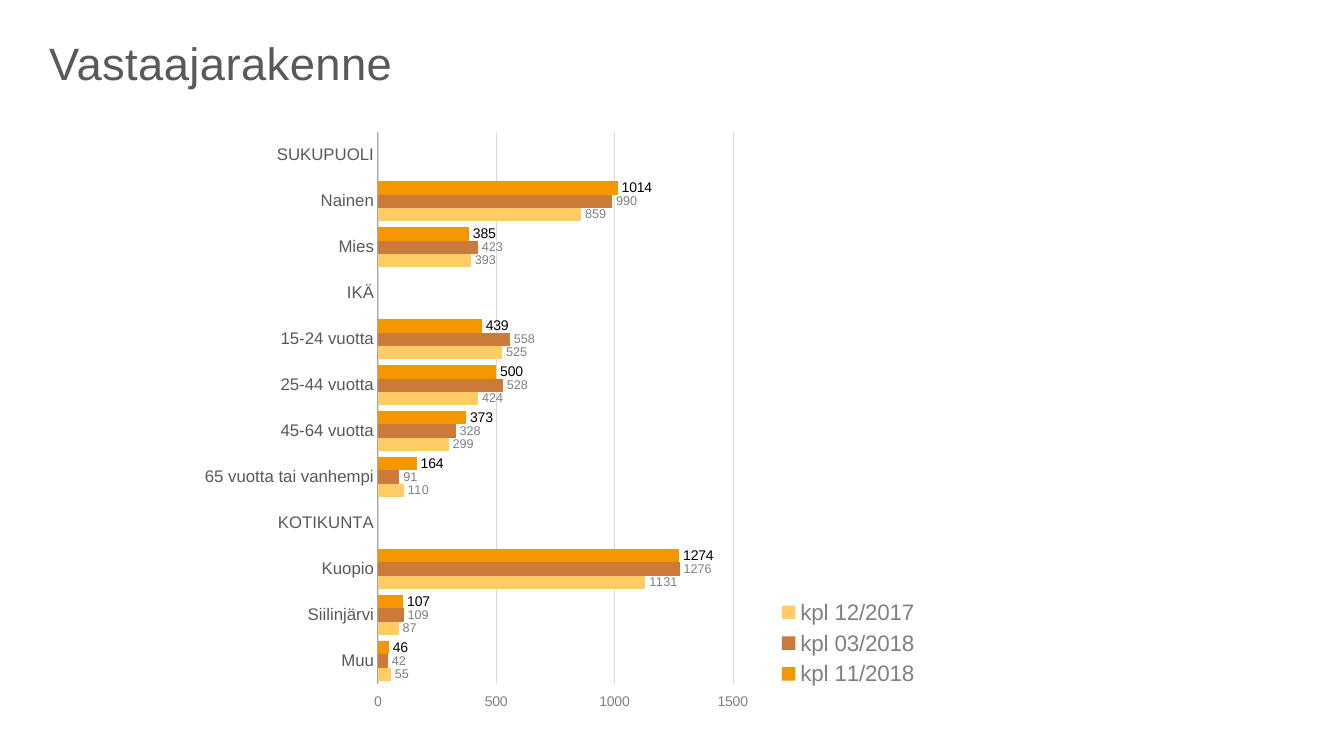
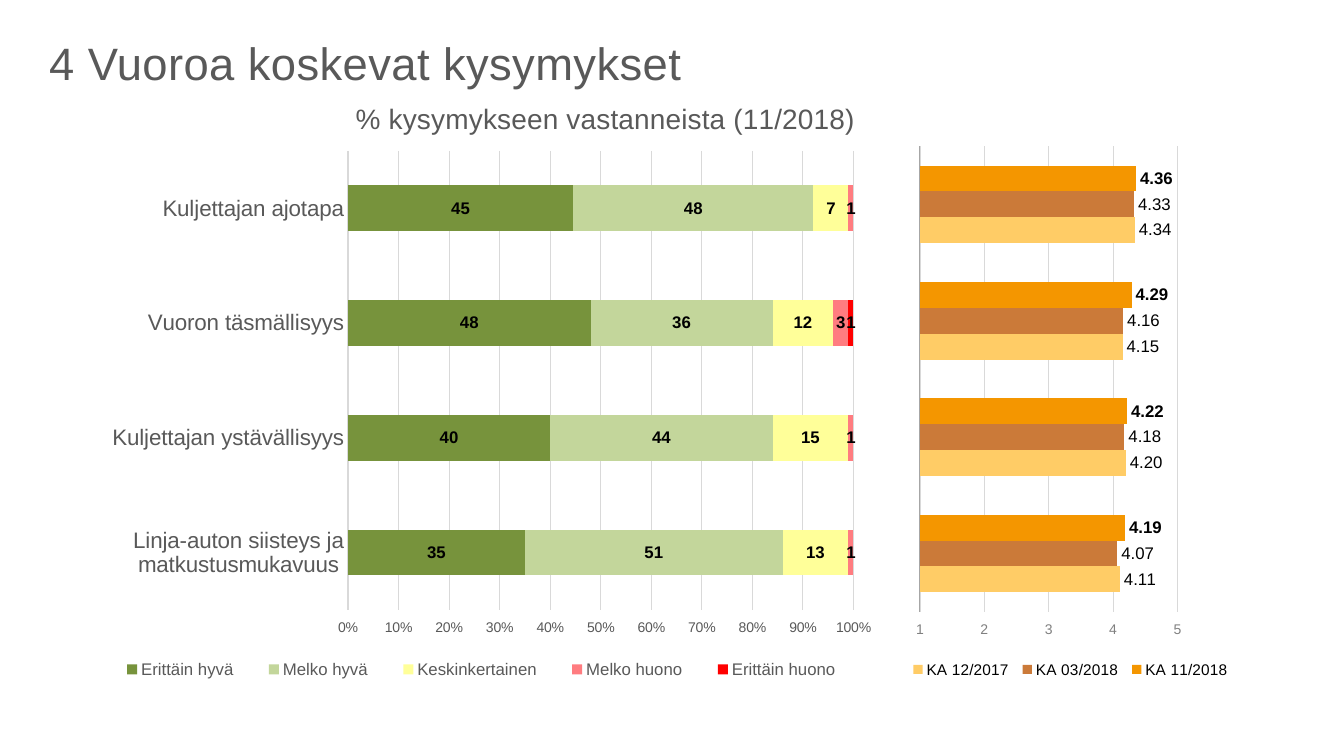
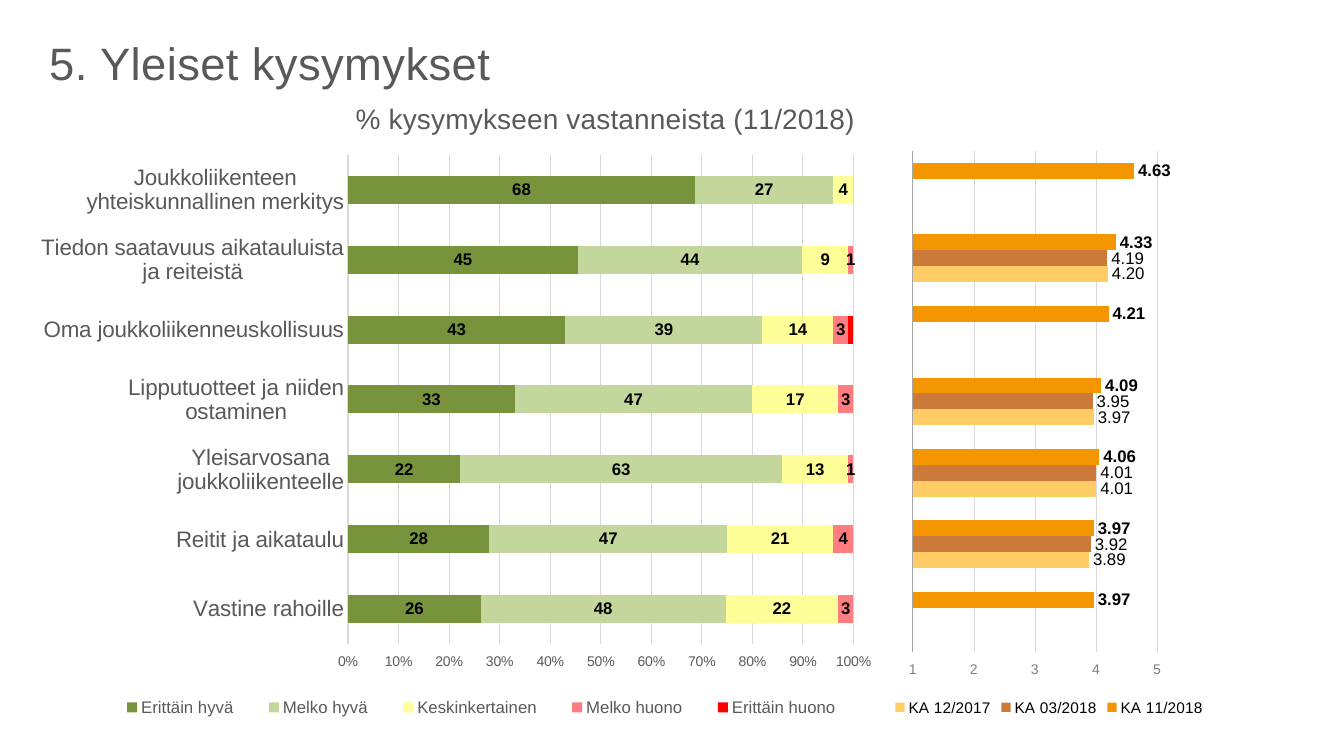
from lxml.etree import Element, SubElement
from pptx import Presentation
from pptx.chart.data import CategoryChartData
from pptx.dml.color import RGBColor
from pptx.enum.chart import XL_CHART_TYPE as ChartType
from pptx.enum.chart import XL_LABEL_POSITION as LabelPosition
from pptx.enum.chart import XL_LEGEND_POSITION as LegendPosition
from pptx.enum.chart import XL_TICK_LABEL_POSITION as TickLabels
from pptx.enum.chart import XL_TICK_MARK as TickMark
from pptx.enum.text import MSO_ANCHOR
from pptx.oxml.ns import qn
from pptx.util import Inches, Pt

FONT = "Arial"
COLORS = {
    "black": "000000", "dark": "595959", "gray": "808080",
    "axis": "A6A6A6", "grid": "D9D9D9",
    "11/2018": "F49600", "03/2018": "CB7A39", "12/2017": "FFCC66",
    "Erittäin hyvä": "77933C", "Melko hyvä": "C3D69B",
    "Keskinkertainen": "FFFF99", "Melko huono": "FF7C80",
    "Erittäin huono": "FF0000",
}
ROUNDS = ["11/2018", "03/2018", "12/2017"]
GRADES = ["Erittäin hyvä", "Melko hyvä", "Keskinkertainen",
          "Melko huono", "Erittäin huono"]

RESPONDENTS = [
    ("SUKUPUOLI", None, None, None),
    ("Nainen", 1014, 990, 859),
    ("Mies", 385, 423, 393),
    ("IKÄ", None, None, None),
    ("15-24 vuotta", 439, 558, 525),
    ("25-44 vuotta", 500, 528, 424),
    ("45-64 vuotta", 373, 328, 299),
    ("65 vuotta tai vanhempi", 164, 91, 110),
    ("KOTIKUNTA", None, None, None),
    ("Kuopio", 1274, 1276, 1131),
    ("Siilinjärvi", 107, 109, 87),
    ("Muu", 46, 42, 55),
]

QUESTION_SLIDES = [
    {
        "title": "4 Vuoroa koskevat kysymykset",
        "height": 5.96, "mean_width": 3.54, "labelled": GRADES,
        "mean_plot": (0.103, 0.094, 0.721, 0.775),
        "mean_legend": (0.06, 0.94, 0.93, 0.05),
        "shares": [
            ("Kuljettajan ajotapa", 45, 48, 7, 1, 0),
            ("Vuoron täsmällisyys", 48, 36, 12, 3, 1),
            ("Kuljettajan ystävällisyys", 40, 44, 15, 1, 0),
            ("Linja-auton siisteys ja matkustusmukavuus", 35, 51, 13, 1, 0),
        ],
        "means": [
            ("1", 4.36, 4.33, 4.34),
            ("2", 4.29, 4.16, 4.15),
            ("3", 4.22, 4.18, 4.2),
            ("4", 4.19, 4.07, 4.11),
        ],
    },
    {
        "title": "5. Yleiset kysymykset",
        "height": 6.35, "mean_width": 3.36, "labelled": GRADES[:4],
        "mean_plot": (0.087, 0.096, 0.721, 0.782),
        "mean_legend": (0.02, 0.94, 0.94, 0.05),
        "shares": [
            ("Joukkoliikenteen yhteiskunnallinen merkitys", 68, 27, 4, 0, 0),
            ("Tiedon saatavuus aikatauluista ja reiteistä", 45, 44, 9, 1, 0),
            ("Oma joukkoliikenneuskollisuus", 43, 39, 14, 3, 1),
            ("Lipputuotteet ja niiden ostaminen", 33, 47, 17, 3, 0),
            ("Yleisarvosana joukkoliikenteelle", 22, 63, 13, 1, 0),
            ("Reitit ja aikataulu", 28, 47, 21, 4, 0),
            ("Vastine rahoille", 26, 48, 22, 3, 0),
        ],
        "means": [
            ("1", 4.63, None, None),
            ("2", 4.33, 4.19, 4.2),
            ("3", 4.21, None, None),
            ("4", 4.09, 3.95, 3.97),
            ("5", 4.06, 4.01, 4.01),
            ("6", 3.97, 3.92, 3.89),
            ("7", 3.97, None, None),
        ],
    },
]


def rgb(name):
    return RGBColor.from_string(COLORS[name])


def style(font, size, color, bold=False):
    font.name, font.size, font.bold = FONT, Pt(size), bold
    font.color.rgb = rgb(color)


def place(element, index, frame, inner=False):
    for old in element.findall(qn("c:layout")):
        element.remove(old)
    layout = Element(qn("c:layout"))
    manual = SubElement(layout, qn("c:manualLayout"))
    settings = [("layoutTarget", "inner")] if inner else []
    settings += [("xMode", "edge"), ("yMode", "edge")]
    settings += zip("xywh", frame)
    for tag, value in settings:
        SubElement(manual, qn(f"c:{tag}")).set("val", str(value))
    element.insert(index, layout)


def add_slide(deck, title):
    page = deck.slides.add_slide(deck.slide_layouts[6])
    box = page.shapes.add_textbox(Inches(0.39), Inches(0.26), Inches(10.73), Inches(0.54))
    frame = box.text_frame
    frame.word_wrap = True
    frame.vertical_anchor = MSO_ANCHOR.TOP
    frame.margin_top = Inches(0.04)
    frame.text = title
    para = frame.paragraphs[0]
    para.line_spacing = 1.1
    span = para.runs[0]
    style(span.font, 32.4, "dark")
    span._r.get_or_add_rPr().set("spc", "30")
    return page


def add_bars(page, kind, at, names, rows, plot_frame, gap):
    data = CategoryChartData()
    data.categories = [row[0] for row in rows]
    for name, values in zip(names, list(zip(*rows))[1:]):
        data.add_series(name, values)
    chart = page.shapes.add_chart(kind, *map(Inches, at), data).chart
    style(chart.font, 18, "black")
    chart.has_title = False
    plot = chart.plots[0]
    plot.vary_by_categories = False
    plot.gap_width = gap
    plot.overlap = 100 if kind == ChartType.BAR_STACKED_100 else 0
    place(chart._chartSpace.chart.plotArea, 0, plot_frame, inner=True)
    return chart


def style_axes(chart, category, value, bounds, grid_width):
    rows, scale = chart.category_axis, chart.value_axis
    rows.reverse_order = True
    rows.has_major_gridlines = False
    size, line = category
    style(rows.tick_labels.font, size, "dark")
    rows.format.line.color.rgb = rgb(line)
    rows.format.line.width = Pt(0.75)
    for axis in (rows, scale):
        axis.major_tick_mark = axis.minor_tick_mark = TickMark.NONE
    color, number_format = value
    style(scale.tick_labels.font, 10, color)
    scale.tick_labels.number_format = number_format
    scale.tick_labels.number_format_is_linked = False
    scale.tick_label_position = TickLabels.HIGH
    scale.minimum_scale, scale.maximum_scale, scale.major_unit = bounds
    scale.format.line.fill.background()
    scale.has_major_gridlines = True
    scale.major_gridlines.format.line.color.rgb = rgb("grid")
    scale.major_gridlines.format.line.width = Pt(grid_width)


def add_legend(chart, position, frame, size, color):
    chart.has_legend = True
    chart.legend.position = position
    chart.legend.include_in_layout = False
    style(chart.legend.font, size, color)
    place(chart.legend._element, 1, frame)


def style_series(series, fill, label=None):
    series.format.fill.solid()
    series.format.fill.fore_color.rgb = rgb(fill)
    series.invert_if_negative = False
    if label:
        size, color, bold, number_format, position = label
        labels = series.data_labels
        labels.show_value = True
        labels.number_format = number_format
        labels.number_format_is_linked = False
        labels.position = position
        style(labels.font, size, color, bold)


def add_respondents(page):
    chart = add_bars(page, ChartType.BAR_CLUSTERED, (1.11, 1.11, 8.07, 6.13),
                     [f"kpl {when}" for when in ROUNDS], RESPONDENTS,
                     (0.327, 0.033, 0.436, 0.893), 50)
    style_axes(chart, (12, "axis"), ("gray", "General"), (0, 1500, 500), 0.25)
    add_legend(chart, LegendPosition.RIGHT, (0.81, 0.78, 0.19, 0.16), 16, "gray")
    for index, (series, when) in enumerate(zip(chart.plots[0].series, ROUNDS)):
        size, color = (9, "gray") if index else (10, "black")
        style_series(series, when, (size, color, False, "0", LabelPosition.OUTSIDE_END))


def add_shares(page, topic):
    chart = add_bars(page, ChartType.BAR_STACKED_100, (0.38, 0.89, 8.37, topic["height"]),
                     GRADES, topic["shares"], (0.367, 0.102, 0.599, 0.764), 150)
    style_axes(chart, (16, "grid"), ("dark", "0%"), (0, 1, 0.1), 0.75)
    add_legend(chart, LegendPosition.BOTTOM, (0.07, 0.94, 0.91, 0.05), 12, "dark")
    chart.has_title = True
    heading = chart.chart_title
    heading.text_frame.text = "% kysymykseen vastanneista (11/2018)"
    style(heading.text_frame.paragraphs[0].runs[0].font, 20, "dark")
    place(heading._element, 1, (0.37, 0.01))
    for series, grade in zip(chart.plots[0].series, GRADES):
        label = (12, "black", True, "0;;", LabelPosition.CENTER)
        style_series(series, grade, label if grade in topic["labelled"] else None)


def add_means(page, topic):
    chart = add_bars(page, ChartType.BAR_CLUSTERED,
                     (8.76, 0.89, topic["mean_width"], topic["height"]),
                     [f"KA {when}" for when in ROUNDS], topic["means"],
                     topic["mean_plot"], 150)
    style_axes(chart, (12, "axis"), ("gray", "General"), (1, 5, 1), 0.25)
    chart.category_axis.tick_label_position = TickLabels.NONE
    add_legend(chart, LegendPosition.BOTTOM, topic["mean_legend"], 11, "black")
    for index, (series, when) in enumerate(zip(chart.plots[0].series, ROUNDS)):
        style_series(series, when, (12, "black", index == 0, "0.00", LabelPosition.OUTSIDE_END))


def main():
    deck = Presentation()
    deck.slide_width, deck.slide_height = Inches(13.33), Inches(7.5)
    add_respondents(add_slide(deck, "Vastaajarakenne"))
    for topic in QUESTION_SLIDES:
        page = add_slide(deck, topic["title"])
        add_shares(page, topic)
        add_means(page, topic)
    deck.save("out.pptx")


if __name__ == "__main__":
    main()
